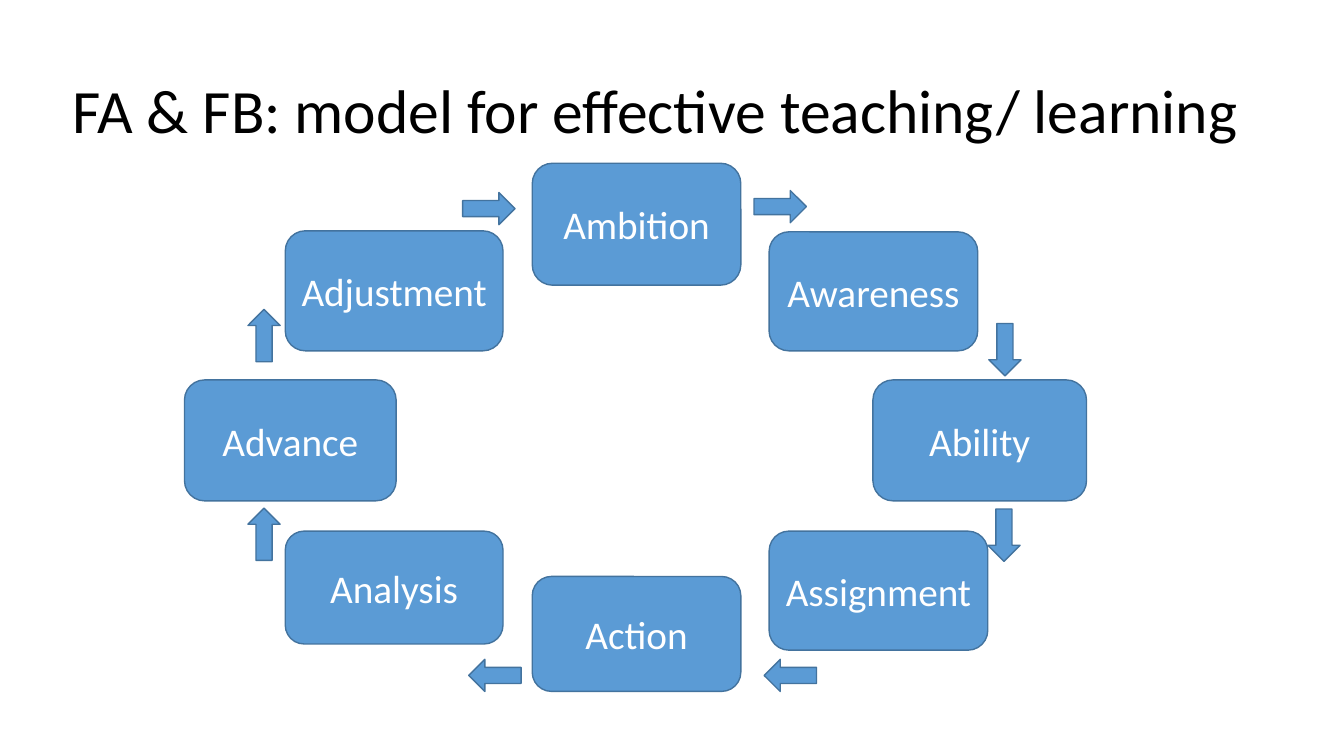
from dataclasses import dataclass

from pptx import Presentation
from pptx.dml.color import RGBColor
from pptx.enum.shapes import MSO_SHAPE as Kind
from pptx.enum.text import MSO_ANCHOR as Anchor, MSO_AUTO_SIZE as Fit, PP_ALIGN as Align
from pptx.shapes.autoshape import Shape
from pptx.slide import Slide
from pptx.util import Pt

BLUE = RGBColor(0x5B, 0x9B, 0xD5)
EDGE = RGBColor(0x43, 0x73, 0x9E)
WHITE = RGBColor(0xFF, 0xFF, 0xFF)
BLACK = RGBColor(0x00, 0x00, 0x00)
FONT = "Calibri"
ARROW_W, ARROW_H = 37.4, 23


@dataclass
class Step:
    name: str
    left: float
    top: float
    width: float
    height: float


@dataclass
class Arrow:
    left: float
    top: float
    turn: int


# Both lists run clockwise from the top of the cycle.
STEPS = [
    Step("Ambition", 380.2, 116.6, 149, 87.1),
    Step("Awareness", 549.4, 165.6, 149, 85),
    Step("Ability", 623.5, 271.4, 152.6, 86.4),
    Step("Assignment", 549.4, 379.4, 156.2, 85),
    Step("Action", 380.2, 411.8, 149, 82.1),
    Step("Analysis", 203.8, 379.4, 155.5, 80.6),
    Step("Advance", 131.8, 271.4, 151.2, 86.4),
    Step("Adjustment", 203.8, 164.9, 155.5, 85.7),
]
ARROWS = [
    Arrow(538.6, 136.1, 0),
    Arrow(699.1, 238.3, 90),
    Arrow(698.4, 370.8, 90),
    Arrow(545.8, 470.9, 180),
    Arrow(334.8, 470.9, 180),
    Arrow(169.9, 370.1, 270),
    Arrow(169.9, 228.2, 270),
    Arrow(330.5, 137.5, 0),
]


def write(shape: Shape, text: str, size: float, color: RGBColor, align: Align) -> None:
    frame = shape.text_frame
    frame.vertical_anchor = Anchor.MIDDLE
    para = frame.paragraphs[0]
    para.alignment = align
    run = para.add_run()
    run.text = text
    run.font.name = FONT
    run.font.size = Pt(size)
    run.font.color.rgb = color


def add_block(slide: Slide, kind: Kind, left: float, top: float,
              width: float, height: float) -> Shape:
    shape = slide.shapes.add_shape(kind, Pt(left), Pt(top), Pt(width), Pt(height))
    shape.shadow.inherit = False
    shape.fill.solid()
    shape.fill.fore_color.rgb = BLUE
    shape.line.color.rgb = EDGE
    shape.line.width = Pt(1)
    return shape


def add_title(slide: Slide, text: str) -> None:
    title = slide.shapes.title
    title.left, title.top = Pt(44.6), Pt(28.8)
    title.width, title.height = Pt(849.6), Pt(104.4)
    title.text_frame.auto_size = Fit.NONE
    write(title, text, 44, BLACK, Align.LEFT)
    title.text_frame.paragraphs[0].line_spacing = 0.9


def add_step(slide: Slide, step: Step) -> None:
    box = add_block(slide, Kind.ROUNDED_RECTANGLE, step.left, step.top,
                    step.width, step.height)
    write(box, step.name, 28, WHITE, Align.CENTER)


def add_arrow(slide: Slide, arrow: Arrow) -> None:
    shape = add_block(slide, Kind.RIGHT_ARROW, arrow.left, arrow.top, ARROW_W, ARROW_H)
    shape.rotation = arrow.turn


def main() -> None:
    deck = Presentation()
    deck.slide_width, deck.slide_height = Pt(960), Pt(540)
    slide = deck.slides.add_slide(deck.slide_layouts.get_by_name("Title Only"))
    add_title(slide, "FA & FB: model for effective teaching/ learning")
    for step in STEPS:
        add_step(slide, step)
    for arrow in ARROWS:
        add_arrow(slide, arrow)
    deck.save("out.pptx")


if __name__ == "__main__":
    main()
